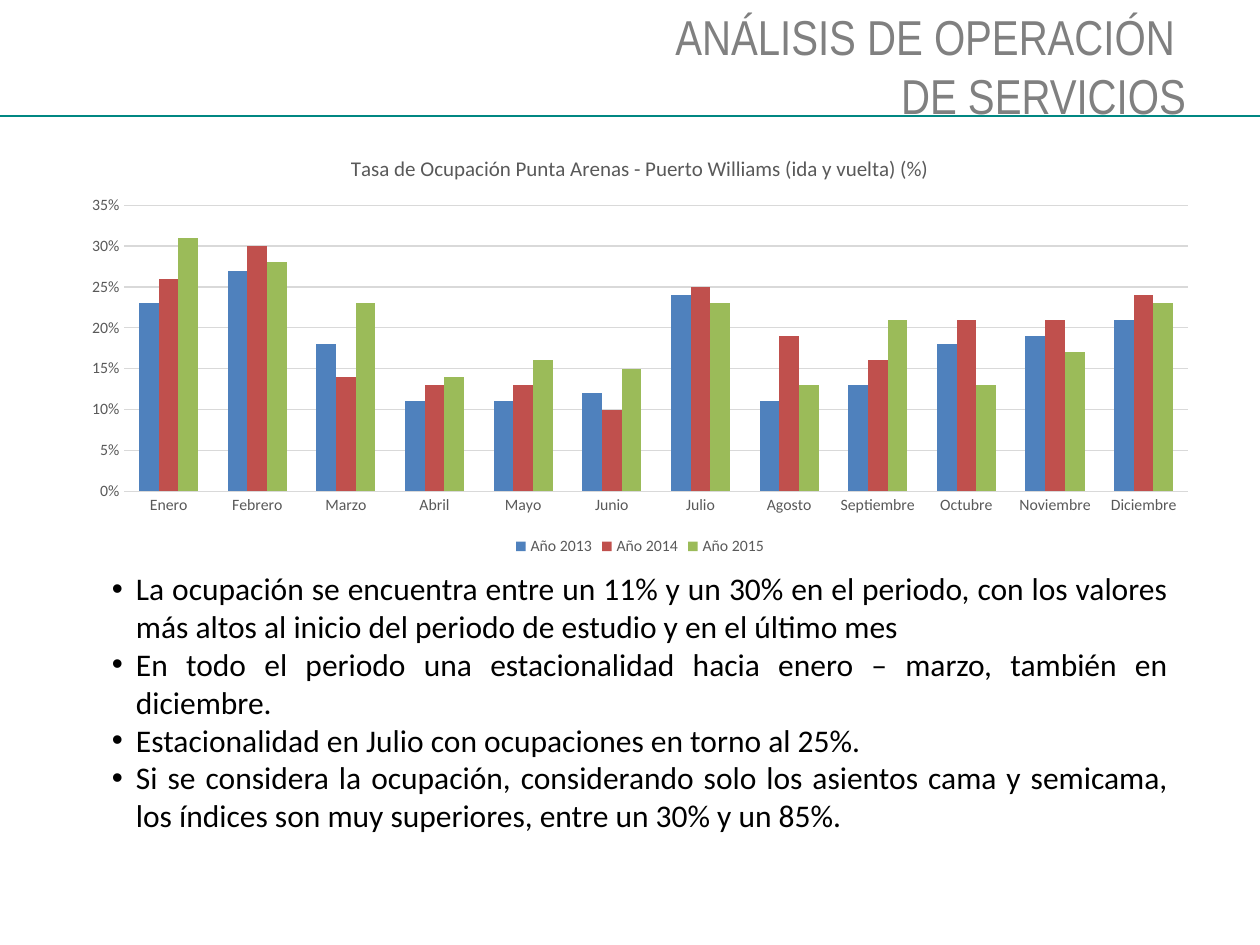
from lxml.etree import SubElement
from pptx import Presentation
from pptx.chart.data import CategoryChartData
from pptx.dml.color import RGBColor
from pptx.enum.chart import XL_CHART_TYPE as ChartType
from pptx.enum.chart import XL_LEGEND_POSITION as LegendPosition
from pptx.enum.chart import XL_TICK_MARK as TickMark
from pptx.enum.shapes import MSO_CONNECTOR as Connector
from pptx.enum.text import MSO_ANCHOR as Anchor
from pptx.enum.text import PP_ALIGN as Align
from pptx.oxml.ns import qn
from pptx.util import Inches, Pt

COLORS = {
    "rule": "008782",
    "heading": "808080",
    "body": "000000",
    "label": "595959",
    "grid": "D9D9D9",
    "Año 2013": "4F81BD",
    "Año 2014": "C0504D",
    "Año 2015": "9BBB59",
}
MONTHS = ["Enero", "Febrero", "Marzo", "Abril", "Mayo", "Junio", "Julio",
          "Agosto", "Septiembre", "Octubre", "Noviembre", "Diciembre"]
OCCUPANCY = {
    "Año 2013": [0.23, 0.27, 0.18, 0.11, 0.11, 0.12, 0.24, 0.11, 0.13, 0.18, 0.19, 0.21],
    "Año 2014": [0.26, 0.3, 0.14, 0.13, 0.13, 0.1, 0.25, 0.19, 0.16, 0.21, 0.21, 0.24],
    "Año 2015": [0.31, 0.28, 0.23, 0.14, 0.16, 0.15, 0.23, 0.13, 0.21, 0.13, 0.17, 0.23],
}
FINDINGS = [
    "La ocupación se encuentra entre un 11% y un 30% en el periodo, con los valores más altos al inicio del periodo de estudio y en el último mes",
    "En todo el periodo una estacionalidad hacia enero – marzo, también en diciembre.",
    "Estacionalidad en Julio con ocupaciones en torno al 25%.",
    "Si se considera la ocupación, considerando solo los asientos cama y semicama, los índices son muy superiores, entre un 30% y un 85%.",
]


def color(key):
    return RGBColor.from_string(COLORS[key])


def apply(target, values):
    for attribute, value in values.items():
        setattr(target, attribute, value)


class SlideBuilder:
    heading_font = "Arial Narrow"
    body_font = "Calibri"

    def __init__(self, slide):
        self.slide = slide

    def style(self, font, size, key, name=body_font):
        apply(font, {"name": name, "size": Pt(size), "bold": False})
        font.color.rgb = color(key)

    def rule(self, left, top, right):
        rule = self.slide.shapes.add_connector(
            Connector.STRAIGHT, Inches(left), Inches(top), Inches(right), Inches(top))
        rule.line.color.rgb = color("rule")
        rule.line.width = Pt(0.75)
        SubElement(rule.element.spPr, qn("a:effectLst"))

    def text_frame(self, box):
        frame = self.slide.shapes.add_textbox(*map(Inches, box)).text_frame
        apply(frame, {"word_wrap": True, "vertical_anchor": Anchor.TOP})
        return frame

    def heading(self, text, box):
        heading = self.text_frame(box).paragraphs[0]
        heading.text = text
        heading.alignment = Align.RIGHT
        for run in heading.runs:
            self.style(run.font, 28, "heading", self.heading_font)

    def bullets(self, items, box):
        frame = self.text_frame(box)
        frame.text = "\n".join(items)
        for item in frame.paragraphs:
            item.alignment = Align.JUSTIFY
            self.style(item.runs[0].font, 18, "body")
            properties = item._p.get_or_add_pPr()
            properties.set("marL", str(Inches(0.19)))
            properties.set("indent", str(-Inches(0.19)))
            SubElement(properties, qn("a:buFont"), typeface="Arial")
            SubElement(properties, qn("a:buChar"), char="•")

    def column_chart(self, title, categories, series, box):
        data = CategoryChartData(number_format="0%")
        data.categories = categories
        for name, values in series.items():
            data.add_series(name, values)
        chart = self.slide.shapes.add_chart(
            ChartType.COLUMN_CLUSTERED, *map(Inches, box), data).chart
        self.style(chart.font, 10, "body")

        chart.has_title = True
        chart.chart_title.text_frame.text = title
        chart.chart_title.include_in_layout = False
        self.style(chart.chart_title.text_frame.paragraphs[0].runs[0].font, 12, "label")

        chart.has_legend = True
        apply(chart.legend, {"position": LegendPosition.BOTTOM, "include_in_layout": False})
        self.style(chart.legend.font, 9, "label")

        for axis in (chart.category_axis, chart.value_axis):
            apply(axis, {"major_tick_mark": TickMark.NONE, "minor_tick_mark": TickMark.NONE})
            axis.format.line.fill.background()
            self.style(axis.tick_labels.font, 9, "label")
        apply(chart.value_axis, {"minimum_scale": 0, "maximum_scale": 0.35, "major_unit": 0.05})
        apply(chart.value_axis.tick_labels,
              {"number_format": "0%", "number_format_is_linked": False})
        grid = chart.value_axis.major_gridlines.format.line
        grid.color.rgb = color("grid")
        grid.width = Pt(0.75)

        plot = chart.plots[0]
        apply(plot, {"gap_width": 150, "overlap": 0, "vary_by_categories": False})
        for year in plot.series:
            year.format.fill.solid()
            year.format.fill.fore_color.rgb = color(year.name)


def main():
    deck = Presentation()
    apply(deck, {"slide_width": Inches(10), "slide_height": Inches(7.5)})
    builder = SlideBuilder(deck.slides.add_slide(deck.slide_layouts[6]))
    builder.rule(0, 0.92, 10.01)
    builder.bullets(FINDINGS, (0.79, 4.47, 8.58, 2.52))
    builder.heading("ANÁLISIS DE OPERACIÓN \vDE SERVICIOS", (0.51, 0, 9, 1.25))
    builder.column_chart(
        "Tasa de Ocupación Punta Arenas - Puerto Williams (ida y vuelta) (%)",
        MONTHS, OCCUPANCY, (0.55, 1.07, 9.06, 3.38))
    deck.save("out.pptx")


if __name__ == "__main__":
    main()
